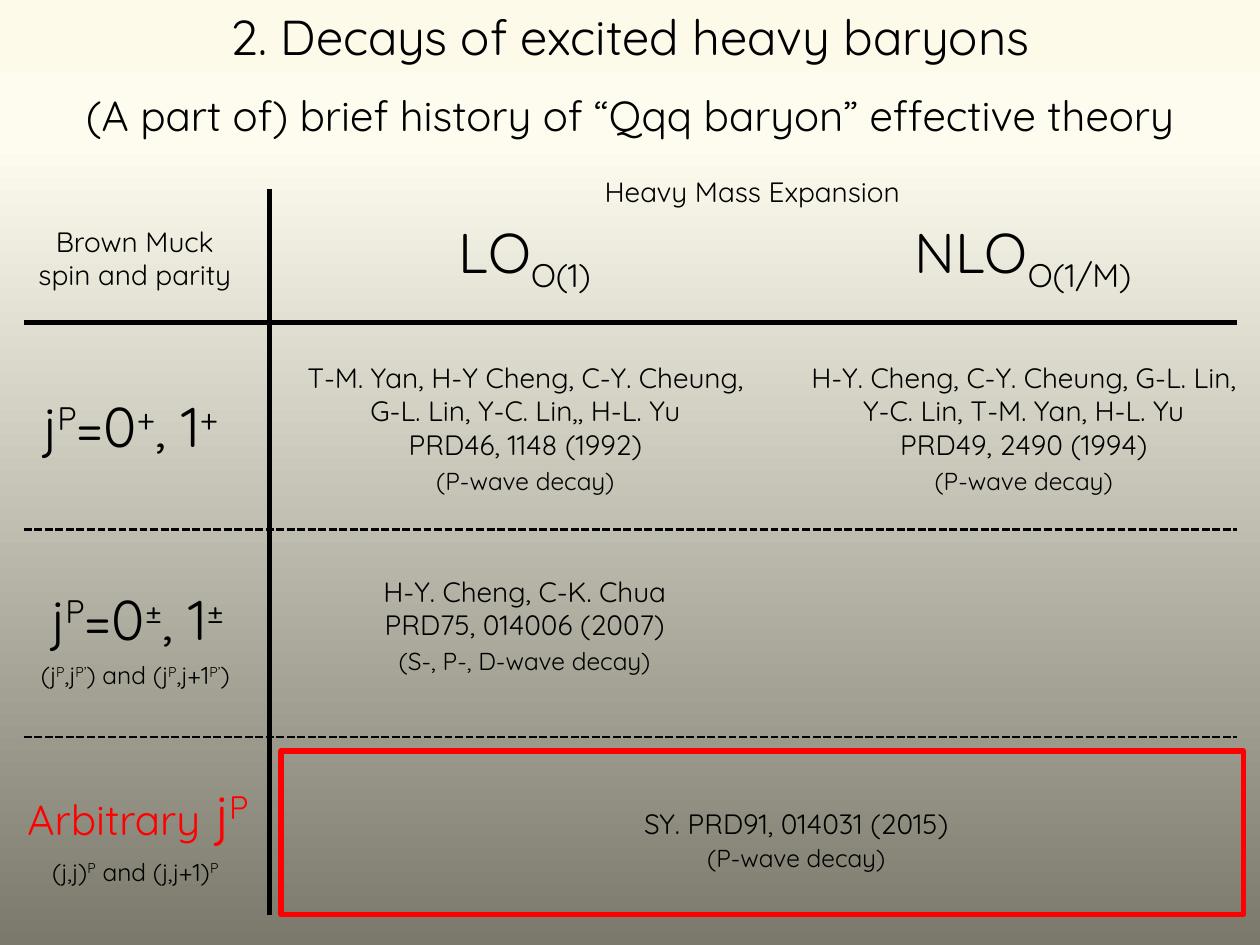
from copy import deepcopy

from lxml import etree
from pptx import Presentation
from pptx.dml.color import RGBColor
from pptx.enum.dml import MSO_LINE
from pptx.enum.shapes import MSO_CONNECTOR, MSO_SHAPE
from pptx.enum.text import MSO_ANCHOR, MSO_AUTO_SIZE, PP_ALIGN
from pptx.oxml.ns import qn
from pptx.util import Inches, Pt

COLORS = {"ink": "000000", "accent": "FF0000", "dark": "7B796B",
          "light": "FEFCEE", "cream": "FDFAEA"}
FONT = "Quicksand"
SUPER, SUB = 30, -25


def color(name):
    return RGBColor.from_string(COLORS[name])


def paint_background(page):
    fill = page.background.fill
    fill.gradient()
    fill.gradient_angle = 90
    stop_list = page._element.find(".//" + qn("a:gsLst"))
    stop_list.append(deepcopy(stop_list[-1]))
    stops = ((0, "dark"), (0.85, "light"), (1, "cream"))
    for stop, (position, name) in zip(fill.gradient_stops, stops):
        stop.position = position
        stop.color.rgb = color(name)


def format_paragraph(para, size, ink="ink"):
    para.alignment = PP_ALIGN.CENTER
    para.font.name = FONT
    para.font.size = Pt(size)
    para.font.color.rgb = color(ink)


def add_text(page, box, lines, size, ink="ink", wrap=False):
    frame = page.shapes.add_textbox(*map(Inches, box)).text_frame
    frame.word_wrap = wrap
    for index, line in enumerate(lines):
        para = frame.add_paragraph() if index else frame.paragraphs[0]
        para.text = line
        format_paragraph(para, size, ink)
    return frame


def add_formula(page, box, parts, size, shift=SUPER, ink="ink"):
    """Odd-numbered parts are raised or lowered by shift."""
    para = add_text(page, box, [""], size, ink).paragraphs[0]
    for index, part in enumerate(parts):
        span = para.add_run()
        span.text = part
        if index % 2:
            span.font._element.set("baseline", str(shift * 1000))
    return para


def add_rule(page, start, end, width, dashed=False):
    rule = page.shapes.add_connector(
        MSO_CONNECTOR.STRAIGHT, *map(Inches, start + end))
    rule.line.color.rgb = color("ink")
    rule.line.width = Pt(width)
    if dashed:
        rule.line.dash_style = MSO_LINE.SQUARE_DOT
    etree.SubElement(rule._element.spPr, qn("a:effectLst"))


def add_heading(page, box):
    left, top, width, height = box
    title = page.shapes.title
    title.left, title.top = Inches(left), Inches(top)
    title.width, title.height = Inches(width), Inches(0.57)
    frame = title.text_frame
    frame.text = "2. Decays of excited heavy baryons"
    frame.word_wrap = False
    frame.auto_size = MSO_AUTO_SIZE.NONE
    frame.vertical_anchor = MSO_ANCHOR.TOP
    format_paragraph(frame.paragraphs[0], 28)
    subtitle = "(A part of) brief history of “Qqq baryon” effective theory"
    add_text(page, (left, top + 0.66, width, 0.5), [subtitle], 24)


def add_grid(page, box):
    left, top, width, height = box
    right = left + width
    add_rule(page, (2.14, top), (2.14, top + height), 3)
    for y, weight, dashed in ((2.56, 3, False), (4.2, 1.5, True), (5.85, 1.5, True)):
        add_rule(page, (left, y), (right, y), weight, dashed)


def add_column_heads(page, box):
    left, top, width, height = box
    add_text(page, (left, top + 0.39, 1.78, 0.64),
             ["Brown Muck spin and parity"], 16, wrap=True)
    add_text(page, (left + 4.38, top, 2.82, 0.37),
             ["Heavy Mass Expansion"], 16, wrap=True)
    add_formula(page, (left + 3.26, top + 0.34, 1.45, 0.64), ("LO", "O(1)"), 32, SUB)
    add_formula(page, (left + 6.85, top + 0.34, 2.18, 0.64), ("NLO", "O(1/M)"), 32, SUB)


def add_row_label(page, box, parts, note=(), ink="ink", lead=""):
    left, top, width, height = box
    para = add_formula(page, (left, top, width, 0.64), parts, 32, ink=ink)
    if lead:
        para.runs[0].font.size = Pt(24)
        para.runs[0].text = lead
        para.runs[1].font._element.attrib.pop("baseline")
        para.runs[2].font._element.set("baseline", str(SUPER * 1000))
    if note:
        add_formula(page, (left - 0.02, top + height - 0.34, width, 0.34), note, 14)


def add_entry(page, box, lines, note):
    left, top, width, height = box
    add_text(page, (left, top, width, height - 0.34), lines, 16)
    add_text(page, (left, top + height - 0.34, width, 0.34), [note], 14)


def add_highlight(page, box):
    frame = page.shapes.add_shape(MSO_SHAPE.RECTANGLE, *map(Inches, box))
    frame.shadow.inherit = False
    frame.fill.background()
    frame.line.color.rgb = color("accent")
    frame.line.width = Pt(3)


def main():
    deck = Presentation()
    deck.slide_width, deck.slide_height = Inches(10), Inches(7.5)
    page = deck.slides.add_slide(deck.slide_layouts[5])
    paint_background(page)
    add_heading(page, (0.33, 0, 9.34, 1.16))
    add_grid(page, (0.19, 1.5, 9.63, 5.76))
    add_column_heads(page, (0.18, 1.34, 9.03, 1.03))

    add_row_label(page, (0.11, 3.06, 1.86, 0.64), ("j", "P", "=0", "+", ", 1", "+"))
    add_row_label(page, (0.18, 4.59, 1.83, 0.94), ("j", "P", "=0", "±", ", 1", "±"),
                  ("(j", "P", ",j", "P’", ") and (j", "P", ",j+1", "P’", ")"))
    add_row_label(page, (0.11, 6.14, 1.97, 0.95), ("", " j", "P"),
                  ("(j,j)", "P", " and (j,j+1)", "P"), "accent", "Arbitrary")

    p_wave = "(P-wave decay)"
    add_entry(page, (2.18, 2.81, 3.98, 1.18),
              ["T-M. Yan, H-Y Cheng, C-Y. Cheung,", "G-L. Lin, Y-C. Lin,, H-L. Yu",
               "PRD46, 1148 (1992)"], p_wave)
    add_entry(page, (6.17, 2.81, 3.91, 1.18),
              ["H-Y. Cheng, C-Y. Cheung, G-L. Lin,", "Y-C. Lin, T-M. Yan, H-L. Yu",
               "PRD49, 2490 (1994)"], p_wave)
    add_entry(page, (2.83, 4.51, 2.67, 0.91),
              ["H-Y. Cheng, C-K. Chua", "PRD75, 014006 (2007)"],
              "(S-, P-, D-wave decay)")
    add_entry(page, (4.9, 6.35, 2.84, 0.63), ["SY. PRD91, 014031 (2015)"], p_wave)
    add_highlight(page, (2.23, 5.96, 7.64, 1.3))
    deck.save("out.pptx")


if __name__ == "__main__":
    main()
